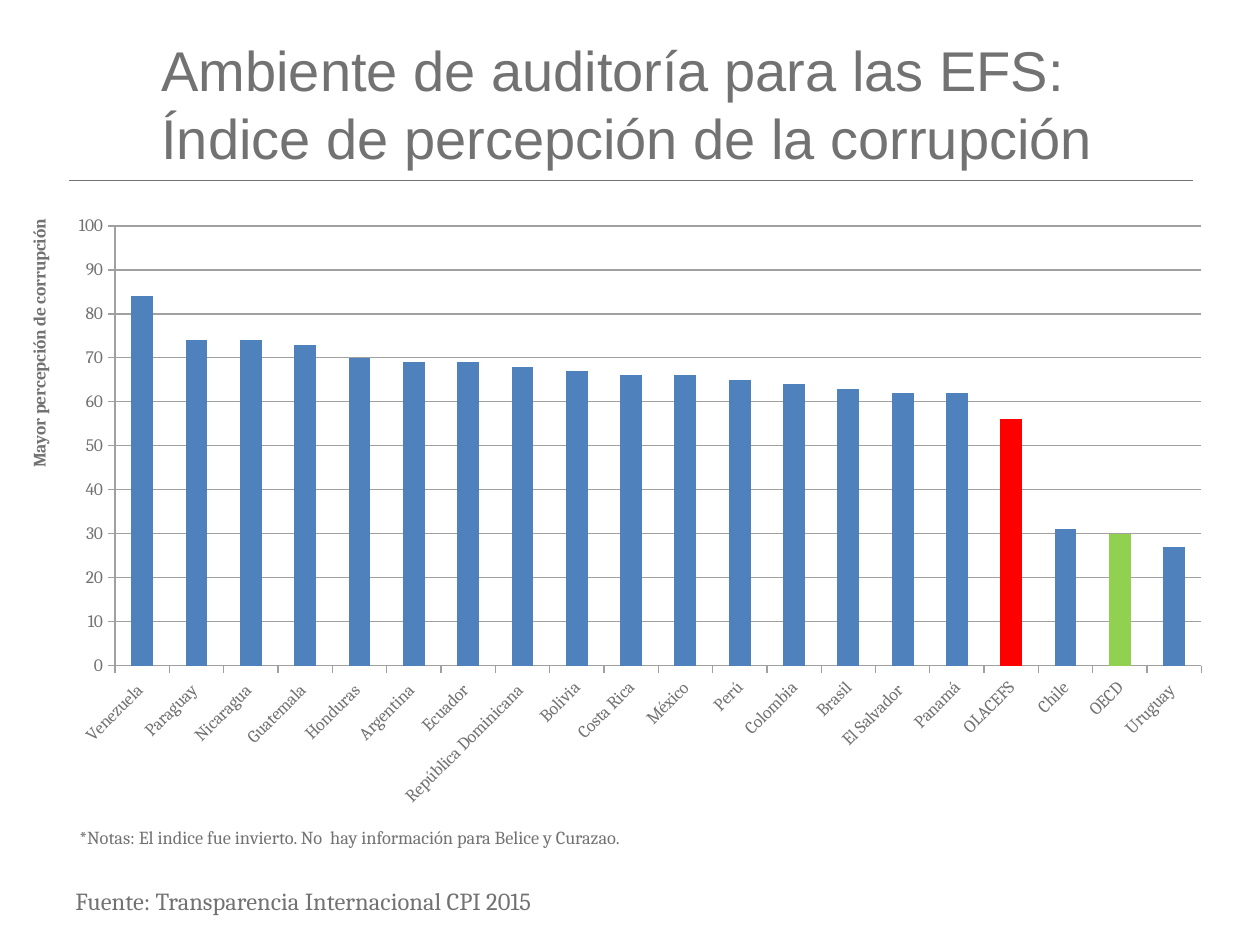
from dataclasses import dataclass

import lxml.etree
import pptx
import pptx.chart.data
import pptx.dml.color
import pptx.enum.chart
import pptx.enum.shapes
import pptx.enum.text
import pptx.oxml
import pptx.oxml.ns
import pptx.util

Cm = pptx.util.Cm
qn = pptx.oxml.ns.qn


@dataclass(frozen=True)
class Theme:
    text: str = "727272"
    grid: str = "A0A0A0"
    bar: str = "4F81BD"
    olacefs: str = "FF0000"
    oecd: str = "92D050"
    heading_font: str = "Arial"
    body_font: str = "Cambria"
    title_size: float = 32
    source_size: float = 14
    note_size: float = 10.5
    chart_size: float = 10


@dataclass(frozen=True)
class Box:
    left: float
    top: float
    width: float
    height: float

    def lengths(self) -> tuple:
        return Cm(self.left), Cm(self.top), Cm(self.width), Cm(self.height)


@dataclass(frozen=True)
class Caption:
    text: str
    box: Box
    size: float


THEME = Theme()
TITLE = "Ambiente de auditoría para las EFS: \vÍndice de percepción de la corrupción"
CAPTIONS = [
    Caption("Fuente: Transparencia Internacional CPI 2015",
            Box(1.27, 17.73, 10.82, 0.86), THEME.source_size),
    Caption("*Notas: El indice fue invierto. No  hay información para Belice y Curazao.",
            Box(1.35, 16.54, 12.57, 0.71), THEME.note_size),
]
PERCEPTION = {
    "Venezuela ": 84, "Paraguay ": 74, "Nicaragua ": 74, "Guatemala ": 73,
    "Honduras ": 70, "Argentina ": 69, "Ecuador ": 69,
    "República Dominicana ": 68, "Bolivia": 67, "Costa Rica": 66,
    "México": 66, "Perú": 65, "Colombia": 64, "Brasil": 63,
    "El Salvador ": 62, "Panamá": 62, "OLACEFS": 56, "Chile": 31,
    "OECD": 30, "Uruguay ": 27,
}
HIGHLIGHTS = {"OLACEFS": THEME.olacefs, "OECD": THEME.oecd}


def rgb(color: str) -> pptx.dml.color.RGBColor:
    return pptx.dml.color.RGBColor.from_string(color)


def set_font(font, *, size: float, name: str = THEME.body_font,
             color: str = THEME.text, bold: bool = False) -> None:
    font.size = pptx.util.Pt(size)
    font.name = name
    font.bold = bold
    font.color.rgb = rgb(color)


def write(tf, text: str, **fmt) -> None:
    p = tf.paragraphs[0]
    p.text = text
    p.alignment = pptx.enum.text.PP_ALIGN.LEFT
    for r in p.runs:
        set_font(r.font, **fmt)


def add_title(s, box: Box) -> None:
    sp = s.shapes.title
    sp.left, sp.top, sp.width, sp.height = box.lengths()
    tf = sp.text_frame
    tf.word_wrap = True
    tf.auto_size = pptx.enum.text.MSO_AUTO_SIZE.NONE
    tf.vertical_anchor = pptx.enum.text.MSO_ANCHOR.MIDDLE
    write(tf, TITLE, size=THEME.title_size, name=THEME.heading_font)


def add_rule(s, left: float, right: float, top: float) -> None:
    line = s.shapes.add_connector(pptx.enum.shapes.MSO_CONNECTOR.STRAIGHT,
                                  Cm(left), Cm(top), Cm(right), Cm(top))
    line.line.color.rgb = rgb(THEME.text)
    line.line.width = pptx.util.Pt(0.5)
    lxml.etree.SubElement(line._element.spPr, qn("a:effectLst"))


def add_caption(s, caption: Caption) -> None:
    tf = s.shapes.add_textbox(*caption.box.lengths()).text_frame
    tf.word_wrap = False
    tf.auto_size = pptx.enum.text.MSO_AUTO_SIZE.SHAPE_TO_FIT_TEXT
    write(tf, caption.text, size=caption.size)


def place(parent, index: int, **fractions) -> None:
    for old in parent.findall(qn("c:layout")):
        parent.remove(old)
    layout = pptx.oxml.parse_xml(f'<c:layout {pptx.oxml.ns.nsdecls("c")}/>')
    manual = lxml.etree.SubElement(layout, qn("c:manualLayout"))
    settings = {"xMode": "edge", "yMode": "edge", **fractions}
    if "w" in fractions:
        settings = {"layoutTarget": "inner", **settings}
    for tag, value in settings.items():
        lxml.etree.SubElement(manual, qn(f"c:{tag}")).set("val", str(value))
    parent.insert(index, layout)


def format_axis(axis) -> None:
    axis.major_tick_mark = pptx.enum.chart.XL_TICK_MARK.OUTSIDE
    axis.minor_tick_mark = pptx.enum.chart.XL_TICK_MARK.NONE
    axis.format.line.color.rgb = rgb(THEME.grid)
    set_font(axis.tick_labels.font, size=THEME.chart_size)


def add_perception_chart(s, box: Box) -> None:
    data = pptx.chart.data.CategoryChartData()
    data.categories = list(PERCEPTION)
    data.add_series("Series 1", list(PERCEPTION.values()))
    chart = s.shapes.add_chart(pptx.enum.chart.XL_CHART_TYPE.COLUMN_CLUSTERED,
                               *box.lengths(), data).chart
    chart.has_legend = False
    chart.has_title = False
    set_font(chart.font, size=THEME.chart_size)

    plot = chart.plots[0]
    plot.gap_width = 150
    plot.vary_by_categories = False
    series = plot.series[0]
    series.format.fill.solid()
    series.format.fill.fore_color.rgb = rgb(THEME.bar)
    for i, name in enumerate(PERCEPTION):
        if name in HIGHLIGHTS:
            fill = series.points[i].format.fill
            fill.solid()
            fill.fore_color.rgb = rgb(HIGHLIGHTS[name])

    cat, val = chart.category_axis, chart.value_axis
    format_axis(cat)
    format_axis(val)
    labels = cat._element.find(qn("c:txPr")).find(qn("a:bodyPr"))
    labels.set("rot", "-2700000")
    labels.set("vert", "horz")
    val.minimum_scale, val.maximum_scale, val.major_unit = 0, 100, 10
    val.has_major_gridlines = True
    val.major_gridlines.format.line.color.rgb = rgb(THEME.grid)

    val.has_title = True
    title = val.axis_title
    tf = title.text_frame
    write(tf, "Mayor percepción de corrupción", size=THEME.chart_size, bold=True)
    heading = tf._txBody.find(qn("a:bodyPr"))
    heading.set("rot", "-5400000")
    heading.set("vert", "horz")
    place(title._element, 1, x=0.02, y=0.02)
    plot_area = chart._chartSpace.find(qn("c:chart")).find(qn("c:plotArea"))
    place(plot_area, 0, x=0.094, y=0.036, w=0.887, h=0.715)


def main() -> None:
    prs = pptx.Presentation()
    prs.slide_width, prs.slide_height = Cm(25.4), Cm(19.05)
    s = prs.slides.add_slide(prs.slide_layouts[5])
    add_rule(s, 1.4, 24.05, 3.63)
    add_title(s, Box(3, 0.66, 20.6, 2.84))
    for caption in CAPTIONS:
        add_caption(s, caption)
    add_perception_chart(s, Box(0, 4.11, 24.69, 12.4))
    prs.save("out.pptx")


if __name__ == "__main__":
    main()
